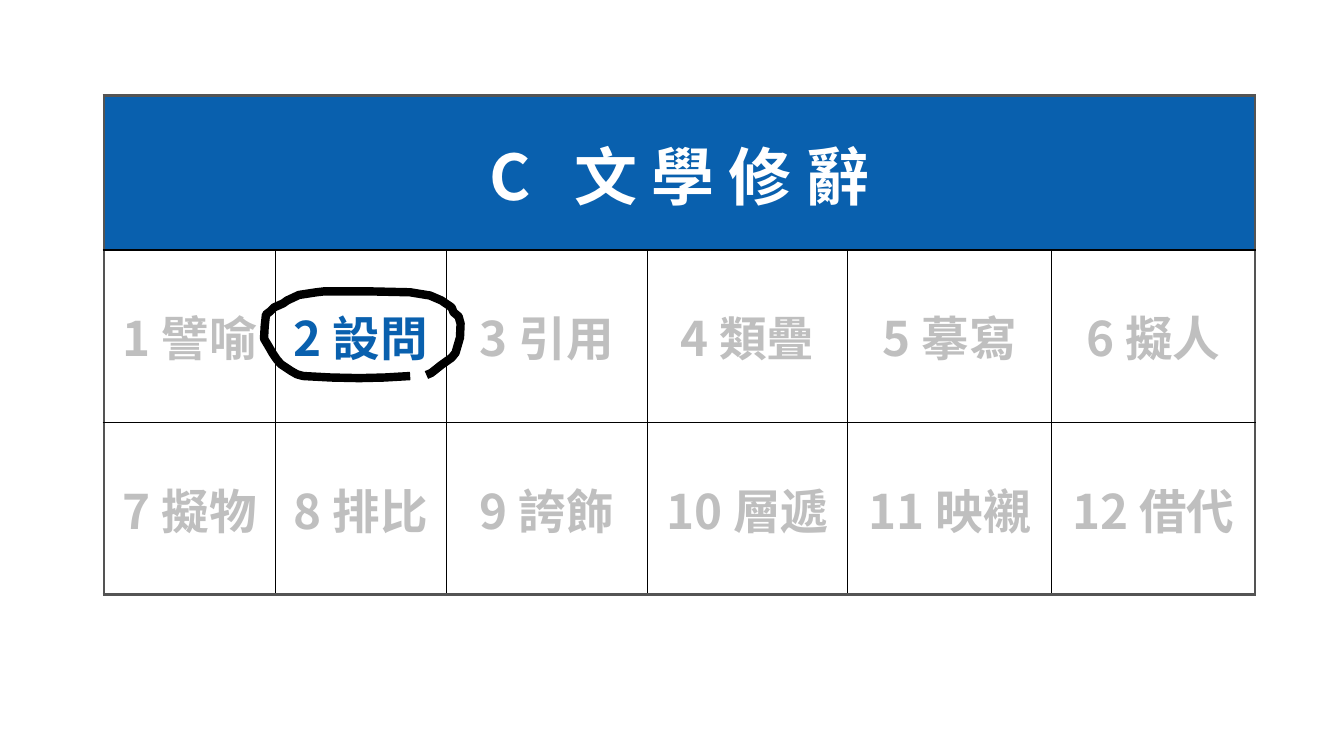
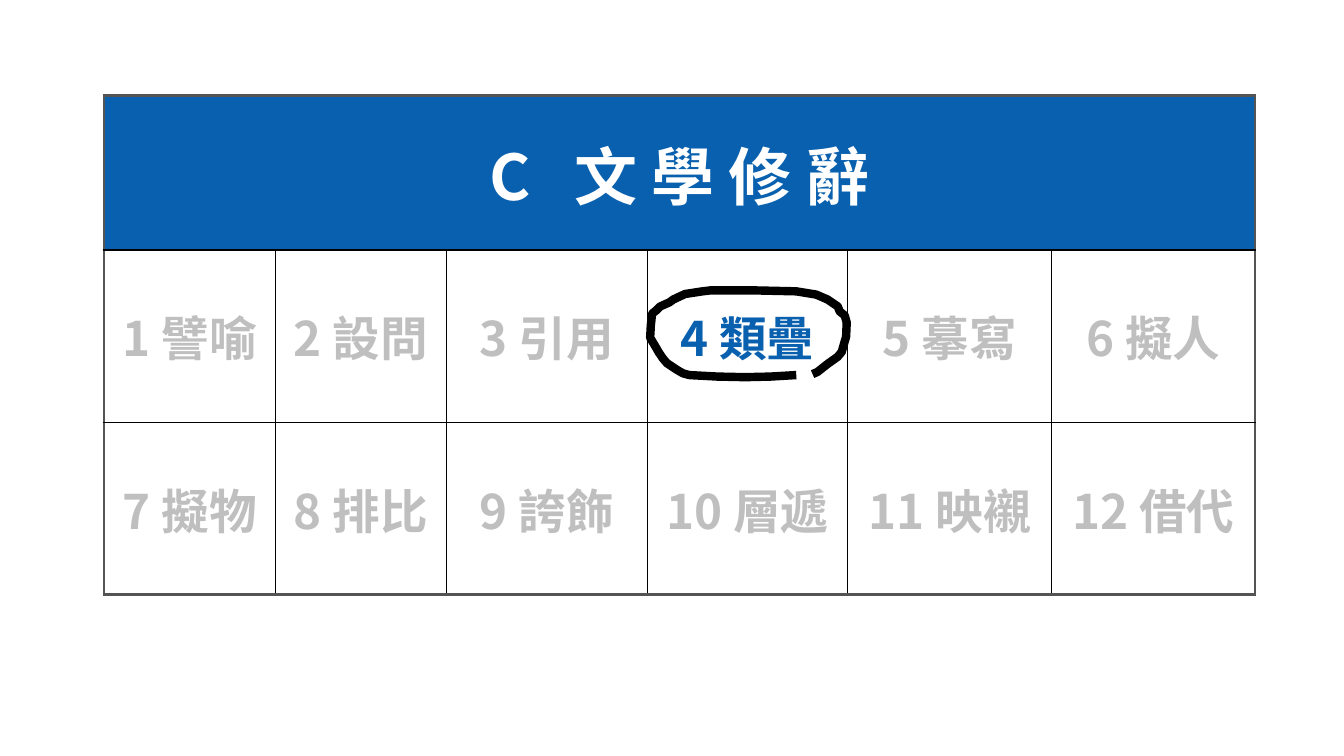
from pptx import Presentation
from pptx.dml.color import RGBColor
from pptx.enum.text import MSO_ANCHOR, PP_ALIGN
from pptx.oxml.ns import qn
from pptx.util import Pt
from lxml.etree import SubElement

FONT = "Noto Sans CJK SC"
BLUE = RGBColor(0x09, 0x60, 0xAE)
WHITE = RGBColor(0xFF, 0xFF, 0xFF)
GREY = RGBColor(0xBF, 0xBF, 0xBF)
BLACK = RGBColor(0, 0, 0)
FRAME = RGBColor(0x54, 0x54, 0x54)
OUTER, INNER = (FRAME, 2.25), (BLACK, 1)

HEAD = "C   文 學 修 辭"
TOPICS = ["譬喻", "設問", "引用", "類疊", "摹寫", "擬人",
          "擬物", "排比", "誇飾", "層遞", "映襯", "借代"]
COLS = [122.4, 122.4, 143.3, 143.3, 145.4, 145.4]
ROWS = [110.2, 123.1, 123.1]
BOX = (74.2, 68.4, sum(COLS), sum(ROWS))

# Hand-drawn ring, in points from its top left corner
RING = [(104.4, 60.5), (86, 61.6), (68, 62), (48, 61.6), (28, 60.5),
        (23.5, 59.3), (19.5, 57), (12, 52), (9, 48.5), (6, 44), (4.3, 41),
        (0, 33.8), (0.5, 25), (1.4, 16.6), (4.3, 14.4), (7.2, 11.5),
        (13.7, 8.6), (16.6, 6.5), (25, 2.6), (37.4, 0.7), (43.2, 0),
        (74, 0), (104.4, 0.7), (108.7, 1.4), (118.5, 3), (126.7, 6.5),
        (134, 11.5), (135.4, 15), (139, 18), (140.4, 23), (140, 33),
        (136.8, 44), (133.9, 47.5), (126.7, 52.6), (119.5, 58.3), (116, 59.8)]

# Each slide: number of the marked topic, place of the ring
MARKS = [(2, 188.6, 208.1), (4, 464.4, 207.4)]


def edge(cell, side, color, width):
    line = SubElement(cell._tc.get_or_add_tcPr(), qn("a:ln" + side))
    line.set("w", str(Pt(width)))
    fill = SubElement(line, qn("a:solidFill"))
    SubElement(fill, qn("a:srgbClr")).set("val", str(color))


def fill_cell(cell, text, size, color, back, rims):
    """Write one cell; rims names the sides on the outer frame."""
    for side in "LRTB":
        edge(cell, side, *(OUTER if side in rims else INNER))
    cell.fill.solid()
    cell.fill.fore_color.rgb = back
    cell.vertical_anchor = MSO_ANCHOR.MIDDLE
    cell.margin_left = cell.margin_right = Pt(12.2)
    cell.margin_top = cell.margin_bottom = Pt(6.5)
    para = cell.text_frame.paragraphs[0]
    para.text = text
    para.alignment = PP_ALIGN.CENTER
    font = para.font
    font.name, font.size, font.bold = FONT, Pt(size), True
    font.color.rgb = color
    # East Asian typeface for the Chinese text
    for run in para.runs:
        props = run._r.get_or_add_rPr()
        for tag in ("a:latin", "a:ea"):
            SubElement(props, qn(tag)).set("typeface", FONT)


def add_grid(slide, box, mark):
    """Topic table with one topic marked in blue."""
    grid = slide.shapes.add_table(len(ROWS), len(COLS), *map(Pt, box)).table
    grid.horz_banding = False
    for col, width in zip(grid.columns, COLS):
        col.width = Pt(width)
    for row, height in zip(grid.rows, ROWS):
        row.height = Pt(height)

    # Heading across all columns
    last = len(COLS) - 1
    grid.cell(0, 0).merge(grid.cell(0, last))
    fill_cell(grid.cell(0, 0), HEAD, 45, WHITE, BLUE, "LRT")

    # Numbered topics
    for i, topic in enumerate(TOPICS):
        row, col = divmod(i, len(COLS))
        rims = {0: "L", last: "R"}.get(col, "") + "B" * row
        color = BLUE if i + 1 == mark else GREY
        fill_cell(grid.cell(row + 1, col), f"{i + 1} {topic}", 34,
                  color, WHITE, rims)


def add_ring(slide, left, top):
    """Open pen stroke around the marked topic."""
    spots = [(Pt(left + x), Pt(top + y)) for x, y in RING]
    pen = slide.shapes.build_freeform(*spots[0])
    pen.add_line_segments(spots[1:], close=False)
    ring = pen.convert_to_shape()
    ring.shadow.inherit = False
    ring.fill.background()
    ring.line.color.rgb = BLACK
    ring.line.width = Pt(6)


def main():
    deck = Presentation()
    deck.slide_width, deck.slide_height = Pt(960), Pt(540)
    for mark, left, top in MARKS:
        slide = deck.slides.add_slide(deck.slide_layouts[6])
        add_grid(slide, BOX, mark)
        add_ring(slide, left, top)
    deck.save("out.pptx")


if __name__ == "__main__":
    main()
